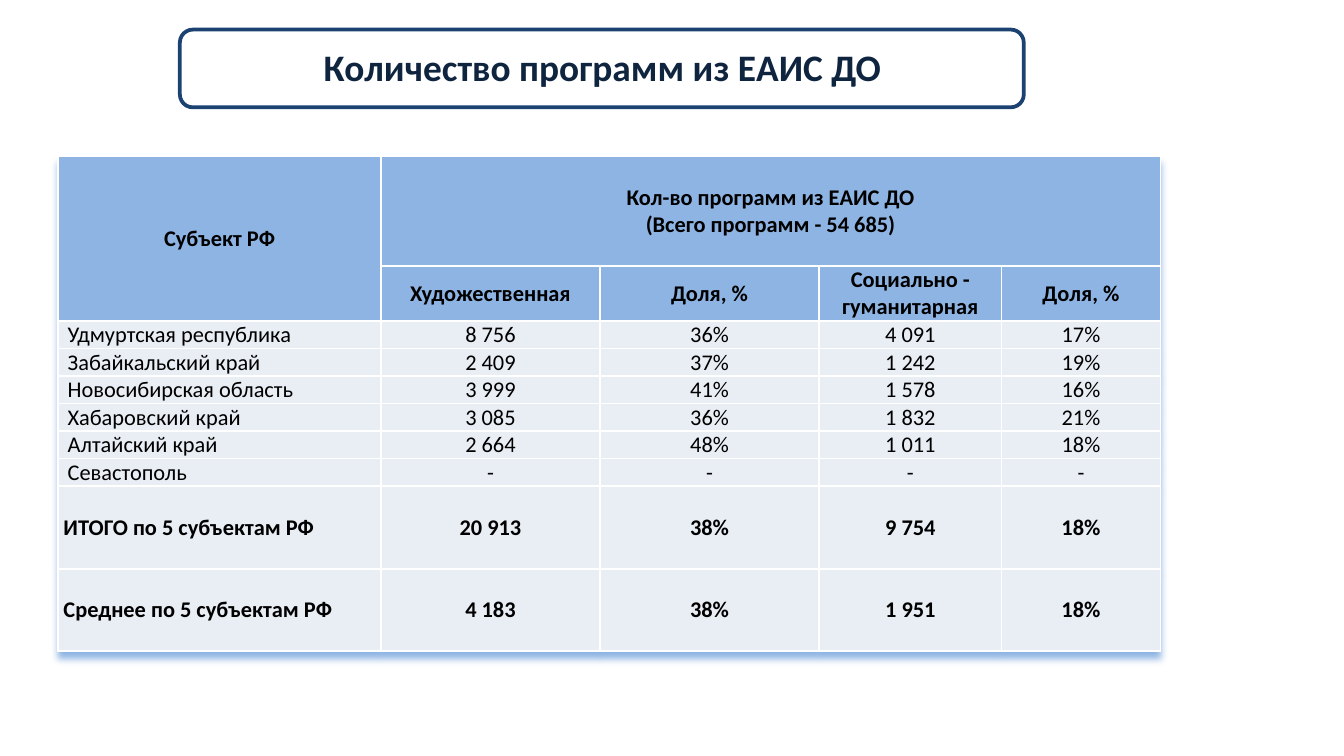
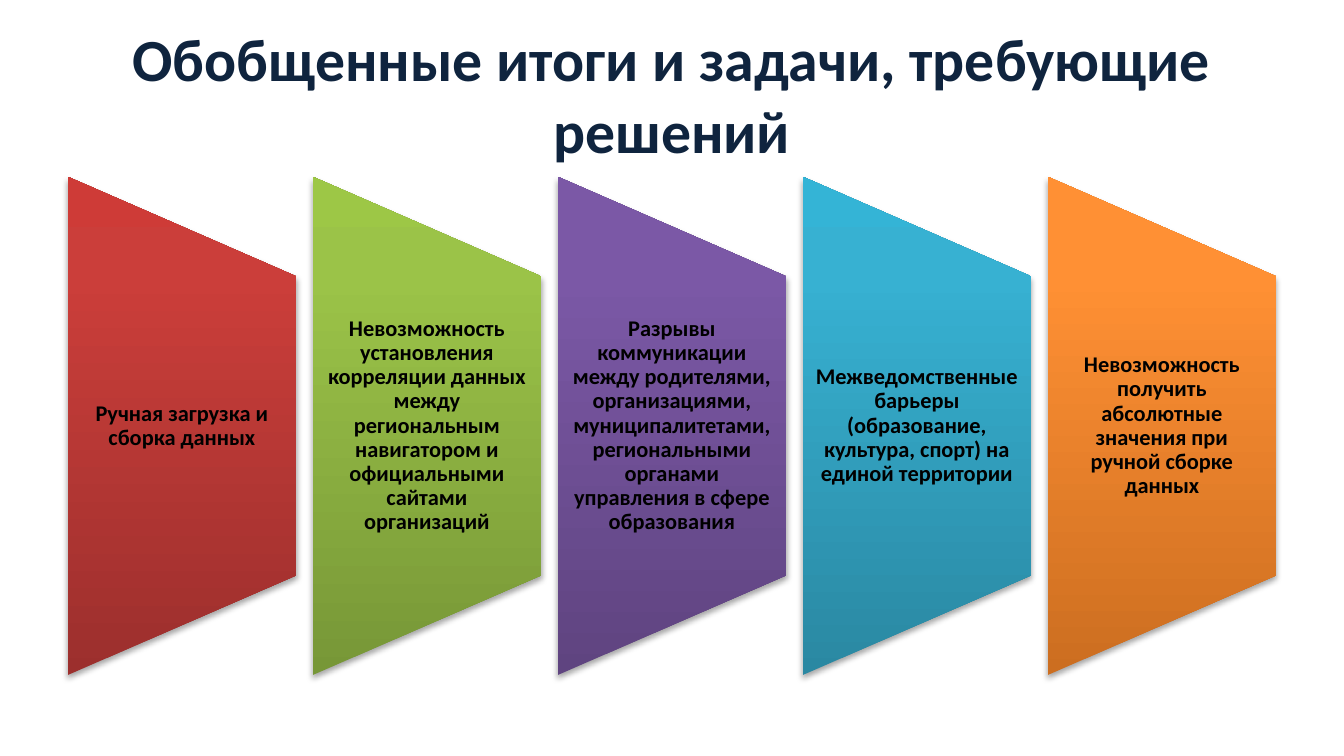
import copy
import dataclasses

import pptx
import pptx.dml.color
import pptx.enum.shapes
import pptx.enum.text
import pptx.oxml.ns
import pptx.util
from lxml import etree

Cm = pptx.util.Cm
Pt = pptx.util.Pt
qn = pptx.oxml.ns.qn
Kind = pptx.enum.shapes.MSO_SHAPE
Align = pptx.enum.text.PP_ALIGN
Anchor = pptx.enum.text.MSO_ANCHOR


@dataclasses.dataclass(frozen=True)
class Theme:
    font: str = "Calibri"
    title: str = "0F243E"
    text: str = "000000"
    frame: str = "1C4271"
    white: str = "FFFFFF"
    head: str = "8EB4E3"
    body: str = "E9EDF4"
    large: int = 32
    medium: int = 20
    small: int = 12


@dataclasses.dataclass(frozen=True)
class Box:
    """A rectangle in centimetres."""
    x: float
    y: float
    w: float
    h: float

    def inner(self, x, y, w, h):
        """Return a box placed relative to this one."""
        return Box(self.x + x, self.y + y, w, h)

    def place(self):
        return [Cm(side) for side in (self.x, self.y, self.w, self.h)]


THEME = Theme()

COLS = (6.1, 4.14, 4.14, 3.45, 3.0)
LINE = 0.52  # height of one line of table text
COUNT = "Кол-во программ из ЕАИС ДО\n(Всего программ - 54 685)"
HEADS = ("Художественная", "Доля, %", "Социально - гуманитарная", "Доля, %")
AREAS = (
    ("Удмуртская республика", "8 756", "36%", "4 091", "17%"),
    ("Забайкальский край", "2 409", "37%", "1 242", "19%"),
    ("Новосибирская область", "3 999", "41%", "1 578", "16%"),
    ("Хабаровский край", "3 085", "36%", "1 832", "21%"),
    ("Алтайский край", "2 664", "48%", "1 011", "18%"),
    ("Севастополь", "-", "-", "-", "-"),
)
SUMS = (
    ("ИТОГО по 5 субъектам РФ", "20 913", "38%", "9 754", "18%"),
    ("Среднее по 5 субъектам РФ", "4 183", "38%", "1 951", "18%"),
)

ISSUES = (
    ("Ручная загрузка и сборка данных", ("9C2F2D", "CB3E3A", "CE3B37")),
    ("Невозможность установления корреляции данных между региональным "
     "навигатором и официальными сайтами организаций",
     ("779737", "9BC348", "9DC746")),
    ("Разрывы коммуникации между родителями, организациями, "
     "муниципалитетами, региональными органами управления в сфере "
     "образования", ("5F4480", "7B58A6", "7C57A8")),
    ("Межведомственные барьеры (образование, культура, спорт) на единой "
     "территории", ("2A88A2", "37B1D2", "34B4D6")),
    ("Невозможность получить абсолютные значения при ручной сборке данных",
     ("CC6E20", "FF9034", "FF9136")),
)


def shade(value):
    return pptx.dml.color.RGBColor.from_string(value)


def style(frame, size, color, bold=True, align=Align.CENTER, space=None):
    for para in frame.paragraphs:
        para.alignment = align
        if space:
            para.line_spacing = space
        for run in para.runs:
            font = run.font
            font.name = THEME.font
            font.size = Pt(size)
            font.bold = bold
            font.color.rgb = shade(color)


def label(slide, box, text, size, color, pad=(0.25, 0.13), space=None):
    """Add centred bold text; pad holds the side and the upright inset."""
    frame = slide.shapes.add_textbox(*box.place()).text_frame
    frame.word_wrap = True
    frame.vertical_anchor = Anchor.MIDDLE
    frame.margin_left = frame.margin_right = Cm(pad[0])
    frame.margin_top = frame.margin_bottom = Cm(pad[1])
    frame.text = text
    style(frame, size, color, space=space)


def title(slide, box, text, size, **extra):
    label(slide, box, text, size, THEME.title, **extra)


def shadow(effects, color, alpha, blur, dist):
    """Add a soft shadow that falls straight down."""
    outer = etree.SubElement(
        effects, qn("a:outerShdw"), blurRad=str(Pt(blur)),
        dist=str(Pt(dist)), dir="5400000", rotWithShape="0")
    tint = etree.SubElement(outer, qn("a:srgbClr"), val=color)
    etree.SubElement(tint, qn("a:alpha"), val=str(alpha * 1000))


def banner(slide, box, text):
    shape = slide.shapes.add_shape(
        Kind.ROUNDED_RECTANGLE, *box.inner(1.09, 0.23, 15.95, 1.47).place())
    shape.shadow.inherit = False
    shape.fill.solid()
    shape.fill.fore_color.rgb = shade(THEME.white)
    shape.line.color.rgb = shade(THEME.frame)
    shape.line.width = Pt(2)
    title(slide, box, text, THEME.medium, pad=(0.48, 0.48), space=0.9)


def border(cell):
    props = cell._tc.get_or_add_tcPr()
    for side in ("lnL", "lnR", "lnT", "lnB"):
        line = etree.SubElement(props, qn("a:" + side), w=str(Pt(1)))
        fill = etree.SubElement(line, qn("a:solidFill"))
        etree.SubElement(fill, qn("a:srgbClr"), val=THEME.white)


def write(cell, text, fill, bold=True, indent=None):
    """Fill a cell; an indent sets its text to the left."""
    border(cell)
    cell.fill.solid()
    cell.fill.fore_color.rgb = shade(fill)
    cell.vertical_anchor = Anchor.MIDDLE
    cell.margin_left = Cm(indent or 0)
    cell.margin_right = cell.margin_top = cell.margin_bottom = 0
    cell.text_frame.text = text
    align = Align.CENTER if indent is None else Align.LEFT
    style(cell.text_frame, THEME.small, THEME.text, bold, align)


def grid(slide, box):
    lines = [4, 2] + [1] * len(AREAS) + [3] * len(SUMS)
    table = slide.shapes.add_table(
        len(lines), len(COLS), *box.place()).table
    table.first_row = table.horz_banding = False
    for col, width in zip(table.columns, COLS):
        col.width = Cm(width)
    for row, count in zip(table.rows, lines):
        row.height = Cm(count * LINE)

    effects = etree.Element(qn("a:effectLst"))
    shadow(effects, THEME.head, 100, 4, 4)
    table._tbl.tblPr.insert(0, effects)

    tops = (("Субъект РФ", COUNT, "", "", ""), ("",) + HEADS)
    for r, row in enumerate(tops + AREAS + SUMS):
        head = r < len(tops)
        area = len(tops) <= r < len(tops) + len(AREAS)
        for c, text in enumerate(row):
            indent = None
            if c == 0 and not head:
                indent = 0.18 if area else 0.1
            write(table.cell(r, c), text, THEME.head if head else THEME.body,
                  not area, indent)
    table.cell(0, 0).merge(table.cell(1, 0))
    table.cell(0, 1).merge(table.cell(0, len(COLS) - 1))


def blend(shape, colors):
    """Fill upwards with three colours, whatever the shape's rotation."""
    shape.fill.gradient()
    shape.fill.gradient_angle = 90
    fill = shape._element.spPr.find(qn("a:gradFill"))
    fill.set("rotWithShape", "0")
    stops = fill.find(qn("a:gsLst"))
    stops.append(copy.deepcopy(stops[-1]))
    for stop, spot, color in zip(stops, (0, 80, 100), colors):
        stop.set("pos", str(spot * 1000))
        stop.remove(stop[0])
        etree.SubElement(stop, qn("a:srgbClr"), val=color)


def panel(slide, box, text, colors):
    # The shape lies on its side, so its width is the panel's height.
    flat = box.inner((box.w - box.h) / 2, (box.h - box.w) / 2, box.h, box.w)
    shape = slide.shapes.add_shape(
        Kind.FLOWCHART_MANUAL_OPERATION, *flat.place())
    shape.rotation = 270
    shape.line.fill.background()
    blend(shape, colors)
    shape.shadow.inherit = False
    effects = shape._element.spPr.find(qn("a:effectLst"))
    shadow(effects, THEME.text, 35, 3.1, 1.8)
    label(slide, box.inner(0, box.h / 5, box.w, box.h * 3 / 5), text,
          THEME.small, THEME.text, pad=(0.21, 0), space=0.9)


def panels(slide, box, gap=0.31):
    count = len(ISSUES)
    width = (box.w - gap * (count - 1)) / count
    for i, (text, colors) in enumerate(ISSUES):
        panel(slide, box.inner(i * (width + gap), 0, width, box.h),
              text, colors)


def counts(slide, box):
    banner(slide, box.inner(2.31, 0.33, 18.16, 1.96),
           "Количество программ из ЕАИС ДО")
    grid(slide, box.inner(1.1, 2.95, sum(COLS), 18 * LINE))


def results(slide, box):
    title(slide, box.inner(1.27, 0.58, 22.86, 2.39),
          "Обобщенные итоги и задачи, требующие решений", THEME.large)
    panels(slide, box.inner(1.28, 3.34, 22.84, 9.42))


def main():
    deck = pptx.Presentation()
    page = Box(0, 0, 25.4, 14.29)
    deck.slide_width, deck.slide_height = Cm(page.w), Cm(page.h)
    for build in (counts, results):
        build(deck.slides.add_slide(deck.slide_layouts[6]), page)
    deck.save("out.pptx")


if __name__ == "__main__":
    main()
